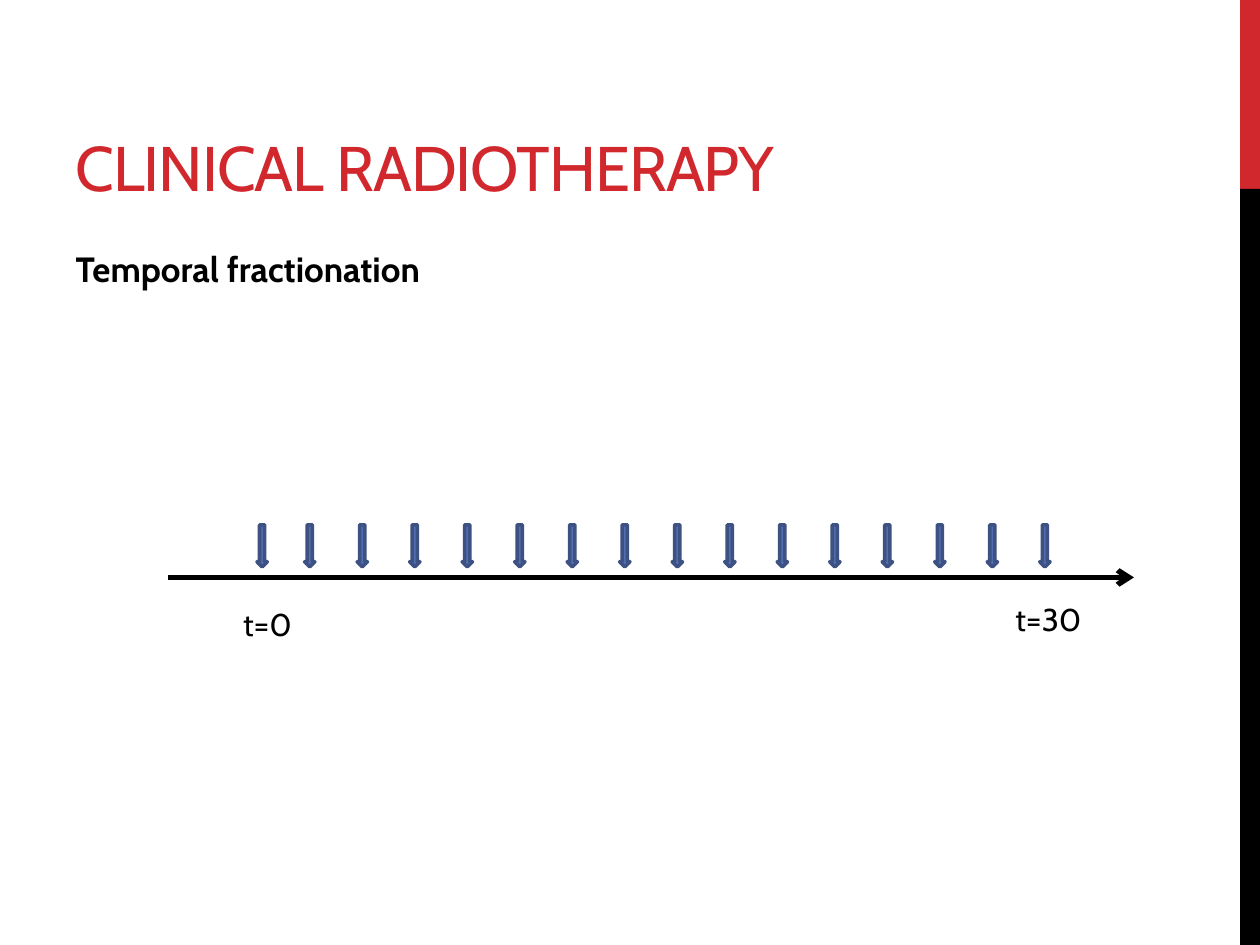
from lxml import etree
from pptx import Presentation
from pptx.dml.color import RGBColor
from pptx.enum.shapes import MSO_CONNECTOR, MSO_SHAPE
from pptx.enum.text import MSO_ANCHOR, MSO_AUTO_SIZE, PP_ALIGN
from pptx.oxml.ns import qn
from pptx.util import Cm, Pt

RECTANGLE, DOWN_ARROW = MSO_SHAPE.RECTANGLE, MSO_SHAPE.DOWN_ARROW
STRAIGHT = MSO_CONNECTOR.STRAIGHT
LEFT = PP_ALIGN.LEFT
TOP, BOTTOM = MSO_ANCHOR.TOP, MSO_ANCHOR.BOTTOM
FIT_SHAPE, NO_FIT = MSO_AUTO_SIZE.SHAPE_TO_FIT_TEXT, MSO_AUTO_SIZE.NONE

FONT = "Cabin"
RED, BLACK, BLUE, DARK_BLUE = "D1282E", "000000", "526DB0", "3D5182"
TITLE = "CLINICAL RADIOTHERAPY"
SUBJECT = "Temporal fractionation"
SIDE_BANDS = [(0, 3.81, RED), (3.81, 15.24, BLACK)]
TIME_LABELS = [("t=0", 4.65, 12.07, 1.7), ("t=30", 20.22, 11.98, 2.0)]
TIME_AXIS = (3.39, 22.86, 11.64)
FIRST_DOSE, SECOND_DOSE, LAST_DOSE = 5.18, 6.14, 20.96
LATER_DOSES = 15
DOSE_TOP, DOSE_WIDTH, DOSE_HEIGHT = 10.58, 0.21, 0.85


def rgb(color):
    return RGBColor.from_string(color)


def place(shape, left, top, width, height):
    shape.left, shape.top = Cm(left), Cm(top)
    shape.width, shape.height = Cm(width), Cm(height)


def write(shape, text, size, color=BLACK, bold=False, anchor=TOP, fit=NO_FIT, tracking=0):
    frame = shape.text_frame
    frame.word_wrap = True
    frame.auto_size = fit
    frame.vertical_anchor = anchor
    paragraph = frame.paragraphs[0]
    paragraph.alignment = LEFT
    run = paragraph.add_run()
    run.text = text
    font = run.font
    font.name, font.size, font.bold = FONT, Pt(size), bold
    font.color.rgb = rgb(color)
    if tracking:
        font._element.set("spc", str(tracking))
    return paragraph


def add_block(slide, kind, box, fill, line=None):
    block = slide.shapes.add_shape(kind, *map(Cm, box))
    block.shadow.inherit = False
    block.fill.solid()
    block.fill.fore_color.rgb = rgb(fill)
    if line:
        block.line.color.rgb = rgb(line)
        block.line.width = Pt(2)
    else:
        block.line.fill.background()


def add_time_axis(slide, start, end, level):
    axis = slide.shapes.add_connector(STRAIGHT, Cm(start), Cm(level), Cm(end), Cm(level))
    axis.line.color.rgb = rgb(BLACK)
    axis.line.width = Pt(3)
    etree.SubElement(axis.line._get_or_add_ln(), qn("a:tailEnd"), type="arrow")
    etree.SubElement(axis._element.spPr, qn("a:effectLst"))


def main():
    """Build the temporal fractionation slide."""
    deck = Presentation()
    deck.slide_width, deck.slide_height = Cm(25.4), Cm(19.05)
    slide = deck.slides.add_slide(deck.slide_layouts[1])

    for top, height, color in SIDE_BANDS:
        add_block(slide, RECTANGLE, (25, top, 0.4, height), color)

    title, body = slide.placeholders
    place(title, 1.27, 0.43, 16.08, 3.81)
    write(title, TITLE, 36, RED, anchor=BOTTOM, tracking=-60)
    place(body, 1.27, 4.87, 21.16, 12.14)
    subject = write(body, SUBJECT, 20, bold=True)
    subject.space_after = Pt(6)
    properties = subject._p.get_or_add_pPr()
    properties.set("marL", "0")
    properties.set("indent", "0")
    etree.SubElement(properties, qn("a:buNone"))

    add_time_axis(slide, *TIME_AXIS)
    gap = (LAST_DOSE - SECOND_DOSE) / (LATER_DOSES - 1)
    for left in [FIRST_DOSE] + [SECOND_DOSE + gap * i for i in range(LATER_DOSES)]:
        add_block(slide, DOWN_ARROW, (left, DOSE_TOP, DOSE_WIDTH, DOSE_HEIGHT), BLUE, DARK_BLUE)

    for text, left, top, width in TIME_LABELS:
        label = slide.shapes.add_textbox(Cm(left), Cm(top), Cm(width), Cm(1.02))
        write(label, text, 18, fit=FIT_SHAPE)

    deck.save("out.pptx")


if __name__ == "__main__":
    main()
